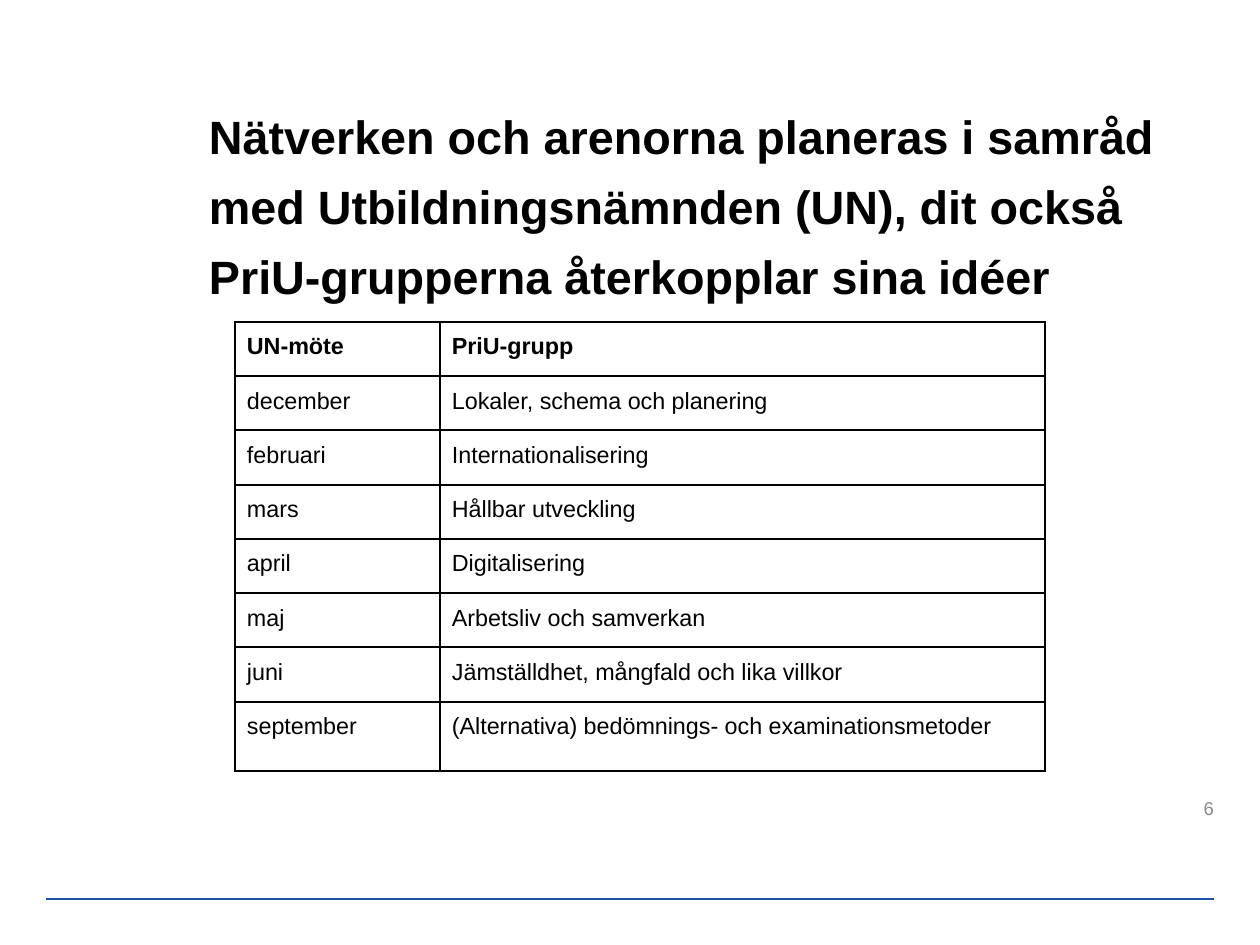
from lxml import etree
from pptx import Presentation
from pptx.dml.color import RGBColor
from pptx.enum.shapes import MSO_CONNECTOR
from pptx.enum.text import MSO_ANCHOR, PP_ALIGN
from pptx.oxml.ns import qn
from pptx.util import Emu, Pt

STRAIGHT = MSO_CONNECTOR.STRAIGHT
MIDDLE, TOP = MSO_ANCHOR.MIDDLE, MSO_ANCHOR.TOP
LEFT, RIGHT = PP_ALIGN.LEFT, PP_ALIGN.RIGHT
PIXELS_PER_INCH = 168
BLACK, WHITE, GRAY, BLUE = "000000", "FFFFFF", "8C8C8C", "1954A6"

TITLE = (
    "Nätverken och arenorna planeras i samråd med Utbildningsnämnden (UN), "
    "dit också PriU-grupperna återkopplar sina idéer"
)
MEETINGS = [
    ("UN-möte", "PriU-grupp"),
    ("december", "Lokaler, schema och planering"),
    ("februari", "Internationalisering"),
    ("mars", "Hållbar utveckling"),
    ("april", "Digitalisering"),
    ("maj", "Arbetsliv och samverkan"),
    ("juni", "Jämställdhet, mångfald och lika villkor"),
    ("september", "(Alternativa) bedömnings- och examinationsmetoder"),
]


def px(length):
    return Emu(round(length * 914400 / PIXELS_PER_INCH))


def color(value):
    return RGBColor.from_string(value)


class SlideBuilder:
    font = "Arial"

    def __init__(self, deck):
        self.slide = deck.slides.add_slide(deck.slide_layouts[6])

    def style(self, paragraph, size, text_color, bold=False, align=LEFT):
        paragraph.alignment = align
        for span in paragraph.runs:
            span.font.name = self.font
            span.font.size = Pt(size)
            span.font.bold = bold
            span.font.color.rgb = color(text_color)

    def text(self, bounds, words, size, text_color, bold=False, align=LEFT, inset=(0, 0), spacing=1.0):
        box = self.slide.shapes.add_textbox(*map(px, bounds))
        frame = box.text_frame
        frame.word_wrap = True
        frame.vertical_anchor = MIDDLE
        frame.margin_left = frame.margin_right = px(inset[0])
        frame.margin_top = frame.margin_bottom = px(inset[1])
        frame.text = words
        paragraph = frame.paragraphs[0]
        paragraph.line_spacing = spacing
        self.style(paragraph, size, text_color, bold, align)

    def line(self, start, end, line_color):
        connector = self.slide.shapes.add_connector(STRAIGHT, *map(px, start + end))
        connector.line.color.rgb = color(line_color)
        connector.line.width = Pt(1)
        etree.SubElement(connector._element.spPr, qn("a:effectLst"))

    def border(self, cell, line_color):
        properties = cell._tc.get_or_add_tcPr()
        for side in ("a:lnL", "a:lnR", "a:lnT", "a:lnB"):
            edge = etree.SubElement(properties, qn(side), w=str(Pt(1)))
            fill = etree.SubElement(edge, qn("a:solidFill"))
            etree.SubElement(fill, qn("a:srgbClr"), val=line_color)

    def table(self, left, top, widths, heights, rows, inset):
        bounds = left, top, sum(widths), sum(heights)
        table = self.slide.shapes.add_table(len(rows), len(widths), *map(px, bounds)).table
        table.first_row = table.horz_banding = False
        for column, width in zip(table.columns, widths):
            column.width = px(width)
        for index, (row, height, words) in enumerate(zip(table.rows, heights, rows)):
            row.height = px(height)
            for cell, value in zip(row.cells, words):
                self.border(cell, BLACK)
                cell.fill.solid()
                cell.fill.fore_color.rgb = color(WHITE)
                cell.vertical_anchor = TOP
                cell.margin_left = cell.margin_right = px(inset)
                cell.margin_top = cell.margin_bottom = px(inset)
                cell.text_frame.text = value
                self.style(cell.text_frame.paragraphs[0], 10, BLACK, bold=index == 0)


def main():
    deck = Presentation()
    deck.slide_width, deck.slide_height = px(1260), px(945)
    page = SlideBuilder(deck)
    page.line((46, 899), (1214, 899), BLUE)
    page.text((197, 153, 1018, 92), TITLE, 20, BLACK, bold=True, inset=(12, 6), spacing=1.25)
    page.text((931, 800, 283, 17), "6", 8, GRAY, align=RIGHT)
    last = len(MEETINGS) - 1
    page.table(235, 322, [205, 605], [380 / last] * last + [69], MEETINGS, 12)
    deck.save("out.pptx")


if __name__ == "__main__":
    main()
